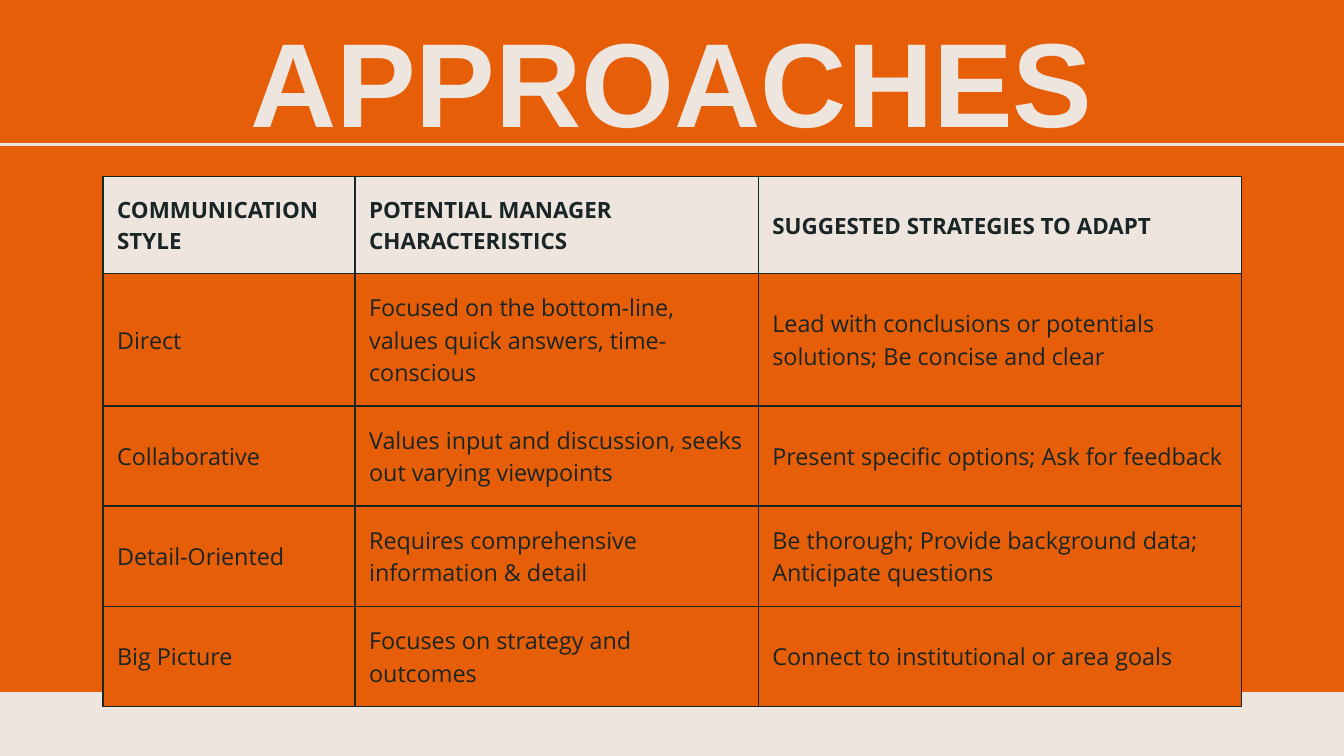
from dataclasses import dataclass

from lxml.etree import SubElement
from pptx import Presentation
from pptx.dml.color import RGBColor
from pptx.enum.shapes import MSO_CONNECTOR, MSO_SHAPE
from pptx.enum.text import MSO_ANCHOR, MSO_AUTO_SIZE, PP_ALIGN
from pptx.oxml import parse_xml
from pptx.oxml.ns import nsdecls, qn
from pptx.util import Pt


@dataclass(frozen=True)
class Theme:
    orange: str = "E65E07"
    cream: str = "EDE5DE"
    ink: str = "1A2526"
    title_font: str = "Arial"
    body_font: str = "Open Sans"
    title_size: float = 128
    header_size: float = 24
    body_size: float = 25
    leading: float = 1.4
    rule: float = 3
    border: float = 1.5
    inset: float = 15.12


def rgb(value):
    return RGBColor.from_string(value)


def write(tf, text, *, size, font, color, leading, bold=False, align=PP_ALIGN.LEFT):
    p = tf.paragraphs[0]
    p.alignment = align
    p.line_spacing = Pt(size * leading)
    r = p.add_run()
    r.text = text
    r.font.size = Pt(size)
    r.font.name = font
    r.font.bold = bold
    r.font.color.rgb = rgb(color)


class SlideBuilder:
    def __init__(self, s, theme):
        self.s = s
        self.theme = theme

    def background(self):
        fill = self.s.background.fill
        fill.solid()
        fill.fore_color.rgb = rgb(self.theme.orange)

    def title(self, text, x, y, w, h):
        t = self.theme
        sp = self.s.shapes.title
        sp.left, sp.top, sp.width, sp.height = Pt(x), Pt(y), Pt(w), Pt(h)
        tf = sp.text_frame
        tf.word_wrap = True
        tf.auto_size = MSO_AUTO_SIZE.NONE
        tf.vertical_anchor = MSO_ANCHOR.TOP
        tf.margin_left = tf.margin_right = tf.margin_top = tf.margin_bottom = 0
        write(tf, text, size=t.title_size, font=t.title_font, color=t.cream,
              leading=t.leading, bold=True, align=PP_ALIGN.CENTER)

    def line(self, x1, y1, x2, y2):
        cxn = self.s.shapes.add_connector(
            MSO_CONNECTOR.STRAIGHT, Pt(x1), Pt(y1), Pt(x2), Pt(y2))
        cxn.line.color.rgb = rgb(self.theme.cream)
        cxn.line.width = Pt(self.theme.rule)
        SubElement(cxn.element.spPr, qn("a:effectLst"))

    def band(self, x, y, w, h):
        sp = self.s.shapes.add_shape(MSO_SHAPE.RECTANGLE, Pt(x), Pt(y), Pt(w), Pt(h))
        sp.shadow.inherit = False
        sp.fill.solid()
        sp.fill.fore_color.rgb = rgb(self.theme.cream)
        sp.line.fill.background()

    def cell(self, cell, text, header):
        t = self.theme
        cell.margin_left = cell.margin_right = Pt(t.inset)
        cell.margin_top = cell.margin_bottom = Pt(t.inset)
        cell.vertical_anchor = MSO_ANCHOR.MIDDLE
        write(cell.text_frame, text, size=t.header_size if header else t.body_size,
              font=t.body_font, color=t.ink, leading=t.leading, bold=header)
        tcPr = cell._tc.get_or_add_tcPr()
        for side in ("lnL", "lnR", "lnT", "lnB"):
            tcPr.append(parse_xml(
                f'<a:{side} {nsdecls("a")} w="{Pt(t.border)}"><a:solidFill>'
                f'<a:srgbClr val="{t.ink}"/></a:solidFill></a:{side}>'))
        cell.fill.solid()
        cell.fill.fore_color.rgb = rgb(t.cream if header else t.orange)

    def table(self, rows, x, y, widths, heights):
        frame = self.s.shapes.add_table(
            len(rows), len(widths), Pt(x), Pt(y), Pt(sum(widths)), Pt(sum(heights)))
        tbl = frame.table
        tbl.horz_banding = False
        for column, width in zip(tbl.columns, widths):
            column.width = Pt(width)
        for i, (texts, height) in enumerate(zip(rows, heights)):
            tbl.rows[i].height = Pt(height)
            for j, text in enumerate(texts):
                self.cell(tbl.cell(i, j), text, header=i == 0)


STYLES = [
    ("COMMUNICATION STYLE", "POTENTIAL MANAGER CHARACTERISTICS",
     "SUGGESTED STRATEGIES TO ADAPT"),
    ("Direct", "Focused on the bottom-line, values quick answers, time-conscious",
     "Lead with conclusions or potentials solutions; Be concise and clear"),
    ("Collaborative", "Values input and discussion, seeks out varying viewpoints",
     "Present specific options; Ask for feedback"),
    ("Detail-Oriented", "Requires comprehensive information & detail",
     "Be thorough; Provide background data; Anticipate questions"),
    ("Big Picture", "Focuses on strategy and outcomes",
     "Connect to institutional or area goals"),
]


def main():
    width, height = 1440, 810
    band_top = 741.6
    prs = Presentation()
    prs.slide_width, prs.slide_height = Pt(width), Pt(height)
    b = SlideBuilder(prs.slides.add_slide(prs.slide_layouts[5]), Theme())
    b.background()
    b.line(0, 154.8, width, 154.8)
    b.band(0, band_top, width, height - band_top)
    b.table(STYLES, 110.4, 189.4, [270, 432, 518], [103.7, 141.8] + [107.3] * 3)
    b.title("APPROACHES", 108.7, -16.6, 1222, 174.2)
    prs.save("out.pptx")


if __name__ == "__main__":
    main()
